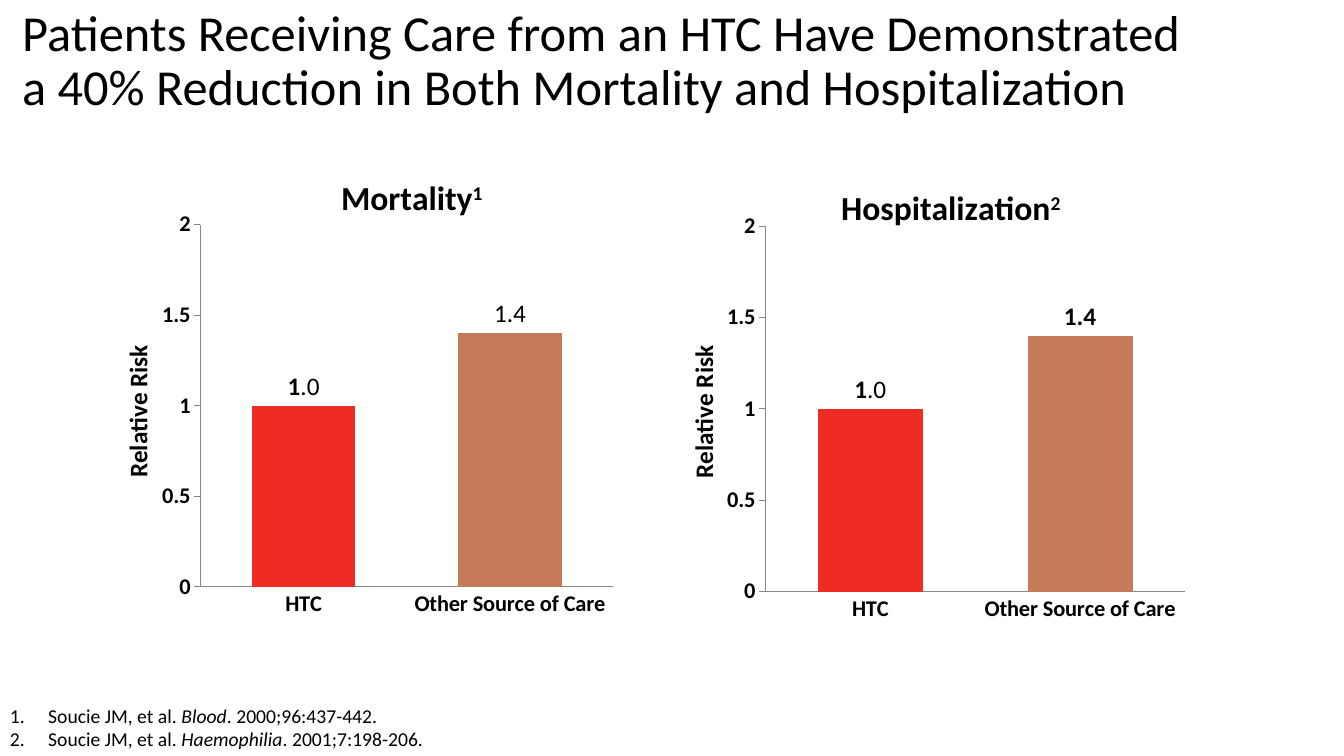
import pptx
import pptx.chart.data
import pptx.dml.color
import pptx.enum.chart
import pptx.enum.text
import pptx.oxml
import pptx.oxml.ns
import pptx.util
from dataclasses import dataclass

Inches = pptx.util.Inches
Pt = pptx.util.Pt
RGB = pptx.dml.color.RGBColor.from_string
qn = pptx.oxml.ns.qn
XL = pptx.enum.chart


@dataclass(frozen=True)
class Theme:
    font: str = "Calibri"
    text: str = "000000"
    axis: str = "868686"
    bars: tuple = ("EE2C24", "C57A5A")
    title: int = 36
    chart_title: int = 24
    label: int = 18
    tick: int = 16
    note: int = 14


T = Theme()


def set_font(font, size, **formats):
    for name, value in {"name": T.font, "size": Pt(size), **formats}.items():
        setattr(font, name, value)
    font.color.rgb = RGB(T.text)


def add_run(p, text, size, **formats):
    r = p.add_run()
    r.text = text
    set_font(r.font, size, **formats)
    return r


def set_layout(element, index, inner=False, **place):
    """Place a chart part by fractions of the chart area."""
    for old in element.findall(qn("c:layout")):
        element.remove(old)
    target = '<c:layoutTarget val="inner"/>' if inner else ""
    modes = "".join(f'<c:{k}Mode val="edge"/>' for k in "xy")
    values = "".join(f'<c:{k} val="{v}"/>' for k, v in place.items())
    element.insert(index, pptx.oxml.parse_xml(
        f'<c:layout {pptx.oxml.ns.nsdecls("c")}><c:manualLayout>'
        f"{target}{modes}{values}</c:manualLayout></c:layout>"))


def add_title(s, box, text):
    title = s.shapes.title
    title.left, title.top, title.width, title.height = map(Inches, box)
    tf = title.text_frame
    formats = {"word_wrap": True,
               "auto_size": pptx.enum.text.MSO_AUTO_SIZE.NONE,
               "vertical_anchor": pptx.enum.text.MSO_ANCHOR.MIDDLE}
    for name, value in formats.items():
        setattr(tf, name, value)
    p = tf.paragraphs[0]
    p.alignment = pptx.enum.text.PP_ALIGN.LEFT
    p.line_spacing = 0.9
    add_run(p, text, T.title)


def add_references(s, box, references):
    tf = s.shapes.add_textbox(*map(Inches, box)).text_frame
    tf.word_wrap = True
    for i, (authors, journal, issue) in enumerate(references):
        p = tf.add_paragraph() if i else tf.paragraphs[0]
        pPr = p._p.get_or_add_pPr()
        pPr.set("marL", str(Inches(0.38)))
        pPr.set("indent", str(Inches(-0.38)))
        pPr.append(pptx.oxml.parse_xml(
            f'<a:buAutoNum {pptx.oxml.ns.nsdecls("a")} type="arabicPeriod"/>'))
        add_run(p, authors, T.note)
        add_run(p, journal, T.note, italic=True)
        add_run(p, issue, T.note)


def style_axis(axis, tick_mark):
    axis.has_major_gridlines = False
    axis.major_tick_mark = tick_mark
    axis.minor_tick_mark = XL.XL_TICK_MARK.NONE
    axis.format.line.color.rgb = RGB(T.axis)
    axis.format.line.width = Pt(0.75)
    set_font(axis.tick_labels.font, T.tick, bold=True)


def add_risk_chart(s, box, outcome, note, plot, title_at, axis_title_at, labels):
    data = pptx.chart.data.CategoryChartData()
    data.categories = ["HTC", "Other Source of Care"]
    data.add_series("Series 1", (1, 1.4))
    chart = s.shapes.add_chart(XL.XL_CHART_TYPE.COLUMN_CLUSTERED,
                               *map(Inches, box), data).chart
    set_font(chart.font, T.label)
    chart.has_legend = False

    # Title and plot area
    chart.has_title = True
    p = chart.chart_title.text_frame.paragraphs[0]
    add_run(p, outcome, T.chart_title, bold=True)
    r = add_run(p, note, T.chart_title, bold=True)
    r.font._element.set("baseline", "30000")
    set_layout(chart.chart_title._element, 1, **dict(zip("xy", title_at)))
    set_layout(chart._chartSpace.chart.plotArea, 0, inner=True,
               **dict(zip("xywh", plot)))

    # Axes
    style_axis(chart.category_axis, XL.XL_TICK_MARK.NONE)
    axis = chart.value_axis
    style_axis(axis, XL.XL_TICK_MARK.OUTSIDE)
    scale = {"minimum_scale": 0, "maximum_scale": 2, "major_unit": 0.5}
    for name, value in scale.items():
        setattr(axis, name, value)
    tf = axis.axis_title.text_frame
    tf._txBody.bodyPr.set("rot", "-5400000")
    tf._txBody.bodyPr.set("vert", "horz")
    add_run(tf.paragraphs[0], "Relative Risk", T.label, bold=True)
    set_layout(axis.axis_title._element, 1, **dict(zip("xy", axis_title_at)))

    # Bars and value labels
    bars = chart.plots[0]
    bars.gap_width = 100
    bars.vary_by_categories = False
    series = bars.series[0]
    series.data_labels.show_value = True
    series.data_labels.position = XL.XL_LABEL_POSITION.OUTSIDE_END
    set_font(series.data_labels.font, T.label, bold=True)
    for i, color in enumerate(T.bars):
        fill = series.points[i].format.fill
        fill.solid()
        fill.fore_color.rgb = RGB(color)
    for i, runs in enumerate(labels):
        label = series.points[i].data_label
        p = label.text_frame.paragraphs[0]
        for text, bold in runs:
            add_run(p, text, T.label, bold=bold)
        label.position = XL.XL_LABEL_POSITION.OUTSIDE_END


def main():
    prs = pptx.Presentation()
    prs.slide_width, prs.slide_height = Inches(13.33), Inches(7.5)
    s = prs.slides.add_slide(prs.slide_layouts[5])

    add_title(s, (0.12, 0.11, 11.83, 1.01),
              "Patients Receiving Care from an HTC Have Demonstrated "
              "a 40% Reduction in Both Mortality and Hospitalization")
    add_references(s, (0, 6.93, 4.33, 0.57), [
        ("Soucie JM, et al. ", "Blood", ". 2000;96:437-442."),
        ("Soucie JM, et al. ", "Haemophilia", ". 2001;7:198-206."),
    ])

    baseline = [("1", True), (".0", False)]
    add_risk_chart(s, (0.99, 1.68, 5.25, 4.99), "Mortality", "1",
                   plot=(0.19, 0.11, 0.78, 0.72), title_at=(0.45, 0.01),
                   axis_title_at=(0.03, 0.34),
                   labels=[baseline, [("1.4", False)]])
    add_risk_chart(s, (6.37, 1.57, 5.55, 5.18), "Hospitalization", "2",
                   plot=(0.22, 0.13, 0.75, 0.7), title_at=(0.35, 0.05),
                   axis_title_at=(0.07, 0.35), labels=[baseline])
    prs.save("out.pptx")


if __name__ == "__main__":
    main()
